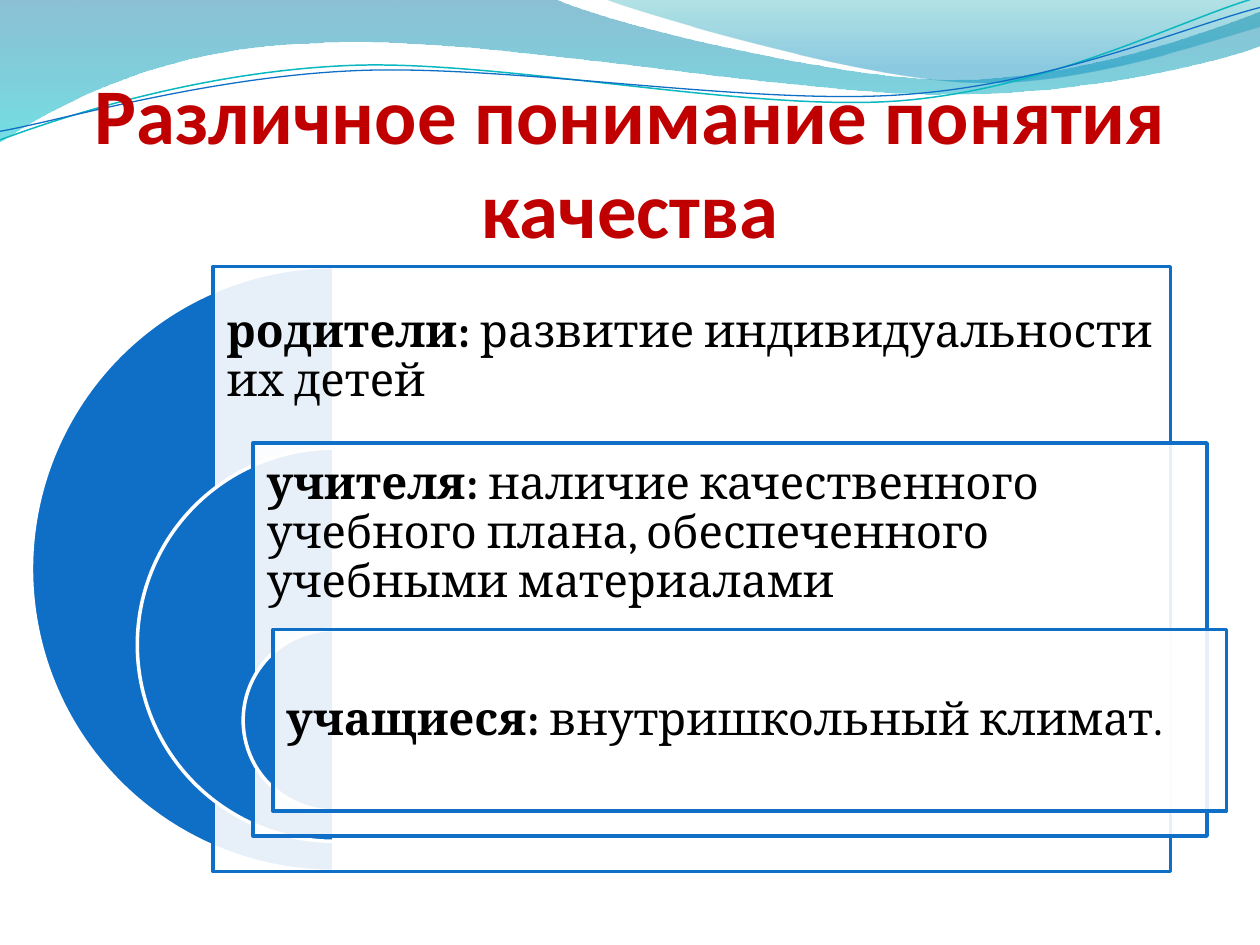
from dataclasses import dataclass

from lxml.etree import SubElement
from pptx import Presentation
from pptx.dml.color import RGBColor
from pptx.enum.shapes import MSO_SHAPE
from pptx.enum.text import MSO_ANCHOR, PP_ALIGN
from pptx.oxml.ns import qn
from pptx.util import Pt

COLORS = {
    "white": "FFFFFF",
    "text": "000000",
    "title": "C00000",
    "accent": "0F6FC6",
    "teal_line": "0AB8BF",
    "deep_blue": "0074A1",
    "cyan": "00C6CF",
    "teal": "00A1A9",
    "sky": "008BBF",
}
PIE_CENTER = 190.8
PIE_TOP = 152.4
BAND_HEIGHT = 103.68


@dataclass(frozen=True)
class GradientStop:
    position: float
    color: str
    opacity: int


@dataclass(frozen=True)
class Wave:
    start: tuple[float, float]
    segments: tuple[tuple[float, ...], ...]
    gradient: tuple[GradientStop, ...] = ()
    line_color: str = ""
    line_width: float = 0
    rotation: float = 0


@dataclass(frozen=True)
class Viewpoint:
    group: str
    meaning: str
    left: float
    top: float
    width: float
    diameter: float


WAVES = (
    Wave(
        (0, 0),
        (
            (316.8, -0.7),
            (342.7, 12.2, 478.1, 45.4, 545.8, 45.4),
            (614.2, 45.4, 689.8, 18.7, 720, 6.5),
            (720.7, 25.9),
            (707.8, 31.7, 626.4, 54.7, 537.1, 54),
            (447.8, 54, 275, 20.2, 185, 24.5),
            (92.9, 25.9, 33.1, 59.8, -0.7, 81.4),
            (0, 0),
        ),
        gradient=(GradientStop(0, "deep_blue", 45), GradientStop(1, "cyan", 55)),
    ),
    Wave(
        (344.9, -0.7),
        (
            (366.5, 7.9, 491, 44.6, 553.7, 46.8),
            (616.3, 49.7, 691.9, 23, 720, 15.1),
            (720, 0),
            (344.9, -0.7),
        ),
        gradient=(GradientStop(0, "teal", 30), GradientStop(0.8, "sky", 45)),
    ),
    Wave(
        (-1.4, 63),
        (
            (33.8, 51.7, 114.1, 29.4, 199.8, 29.9),
            (284.9, 30.3, 425.8, 67.3, 512.4, 64.9),
            (599, 62.4, 676.5, 25.7, 720.2, 15.5),
        ),
        line_color="teal_line",
        line_width=0.85,
        rotation=357.3,
    ),
    Wave(
        (-1.1, 58),
        (
            (32.9, 53.8, 118.3, 32.5, 204.1, 33),
            (290.6, 33.4, 428.9, 63.8, 515.5, 61.4),
            (601.3, 59.6, 678.5, 30.1, 721.4, 21.3),
        ),
        line_color="accent",
        line_width=0.75,
        rotation=357.3,
    ),
)

VIEWPOINTS = (
    Viewpoint("родители: ", "развитие индивидуальности их детей",
              121.68, 152.4, 547.2, 345.6),
    Viewpoint("учителя: ", "наличие качественного учебного плана, "
              "обеспеченного учебными материалами", 144.72, 253.1, 545.04, 224.64),
    Viewpoint("учащиеся: ", "внутришкольный климат.",
              155.9, 359.76, 545.04, 103.68),
)


def rgb(name: str) -> RGBColor:
    return RGBColor.from_string(COLORS[name])


def set_opacity(shape, *percents: int) -> None:
    for color, percent in zip(shape.element.spPr.iter(qn("a:srgbClr")), percents):
        SubElement(color, qn("a:alpha"), val=str(percent * 1000))


def bend(ribbon, segments: tuple[tuple[float, ...], ...]) -> None:
    edges = list(ribbon.element.spPr.iter(qn("a:lnTo")))
    for edge, segment in zip(edges, segments):
        if len(segment) == 6:
            curve = SubElement(edge.getparent(), qn("a:cubicBezTo"))
            for x, y in zip(segment[::2], segment[1::2]):
                SubElement(curve, qn("a:pt"), x=str(Pt(x) - ribbon.left),
                           y=str(Pt(y) - ribbon.top))
            edge.getparent().replace(edge, curve)


def draw_wave(shapes, wave: Wave) -> None:
    builder = shapes.build_freeform(Pt(wave.start[0]), Pt(wave.start[1]))
    knots = [(Pt(segment[-2]), Pt(segment[-1])) for segment in wave.segments]
    builder.add_line_segments(knots, close=bool(wave.gradient))
    ribbon = builder.convert_to_shape()
    bend(ribbon, wave.segments)
    ribbon.rotation = wave.rotation
    ribbon.shadow.inherit = False
    if wave.gradient:
        ribbon.fill.gradient()
        ribbon.fill.gradient_angle = 270
        for stop, wanted in zip(ribbon.fill.gradient_stops, wave.gradient):
            stop.position = wanted.position
            stop.color.rgb = rgb(wanted.color)
        set_opacity(ribbon, *(stop.opacity for stop in wave.gradient))
        ribbon.line.fill.background()
    else:
        ribbon.fill.background()
        ribbon.line.color.rgb = rgb(wave.line_color)
        ribbon.line.width = Pt(wave.line_width)


def draw_preset(shapes, preset, box: tuple[float, ...], fill: str, line: str):
    shape = shapes.add_shape(preset, *map(Pt, box))
    shape.shadow.inherit = False
    shape.fill.solid()
    shape.fill.fore_color.rgb = rgb(fill)
    shape.line.color.rgb = rgb(line)
    shape.line.width = Pt(2)
    return shape


def add_text(shapes, box: tuple[float, ...], anchor, margins: tuple[float, float],
             font_name: str, size: float, color: str):
    frame = shapes.add_textbox(*map(Pt, box)).text_frame
    frame.word_wrap = True
    frame.vertical_anchor = anchor
    frame.margin_left = frame.margin_right = Pt(margins[0])
    frame.margin_top, frame.margin_bottom = Pt(margins[1]), Pt(margins[0])
    paragraph = frame.paragraphs[0]
    paragraph.font.name = font_name
    paragraph.font.size = Pt(size)
    paragraph.font.color.rgb = rgb(color)
    return paragraph


def draw_viewpoint(shapes, view: Viewpoint, index: int) -> None:
    pie_box = (PIE_CENTER - view.diameter / 2, PIE_TOP + index * BAND_HEIGHT,
               view.diameter, view.diameter)
    pie = draw_preset(shapes, MSO_SHAPE.PIE, pie_box, "accent", "white")
    pie.adjustments[0], pie.adjustments[1] = 54, 162
    panel_box = (view.left, view.top, view.width, view.diameter)
    panel = draw_preset(shapes, MSO_SHAPE.RECTANGLE, panel_box, "white", "accent")
    set_opacity(panel, 90)
    statement = add_text(shapes, (view.left, view.top, view.width, BAND_HEIGHT),
                         MSO_ANCHOR.MIDDLE, (7.8, 7.8), "Cambria", 26, "text")
    statement.line_spacing = 0.9
    for text, bold in ((view.group, True), (view.meaning, False)):
        run = statement.add_run()
        run.text = text
        run.font.bold = bold


def main() -> None:
    """Build the slide on how groups understand quality."""
    deck = Presentation()
    deck.slide_width, deck.slide_height = Pt(720), Pt(540)
    shapes = deck.slides.add_slide(deck.slide_layouts[6]).shapes
    for wave in WAVES:
        draw_wave(shapes, wave)
    title = add_text(shapes, (36, 55.44, 648, 90), MSO_ANCHOR.BOTTOM, (0, 3.6),
                     "Calibri", 45, "title")
    title.text = "Различное понимание понятия качества"
    title.font.bold = True
    title.alignment = PP_ALIGN.CENTER
    for index, view in enumerate(VIEWPOINTS):
        draw_viewpoint(shapes, view, index)
    deck.save("out.pptx")


if __name__ == "__main__":
    main()
